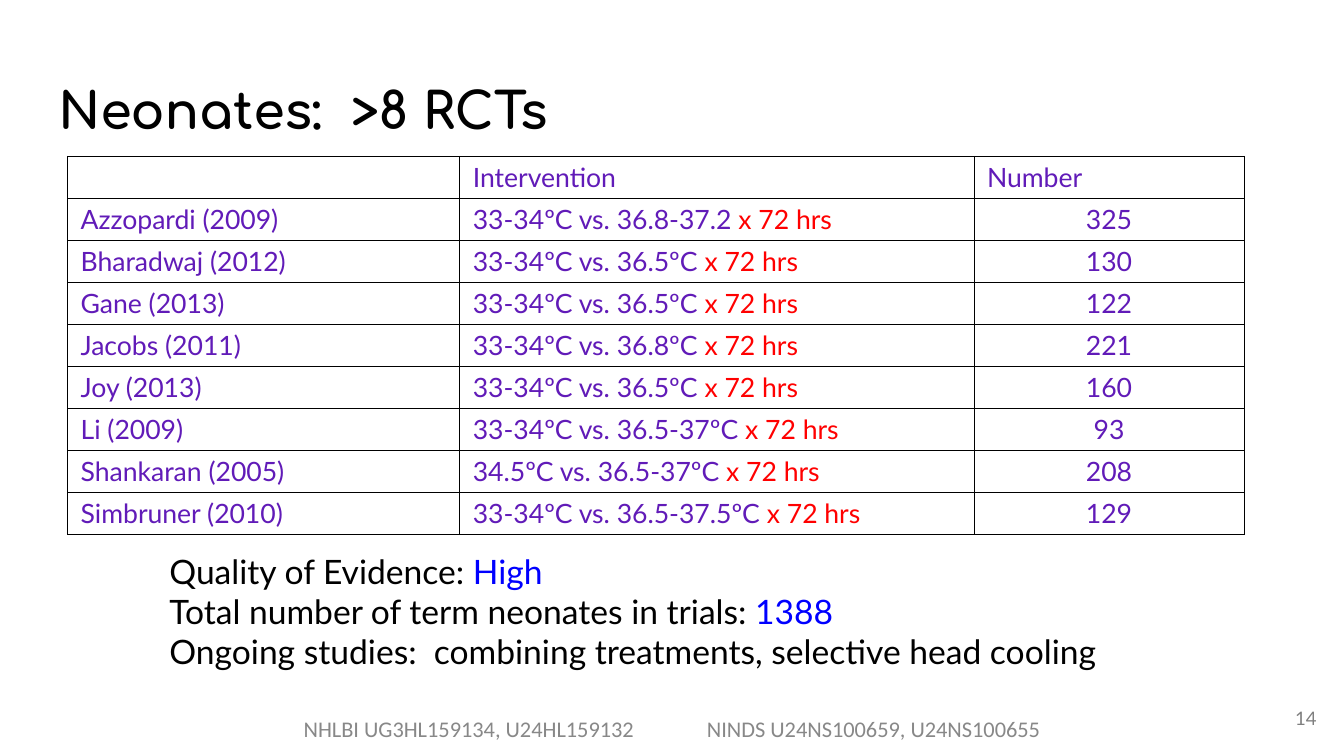
from lxml.etree import SubElement
from pptx import Presentation
from pptx.dml.color import RGBColor
from pptx.enum.text import MSO_ANCHOR, PP_ALIGN
from pptx.oxml.ns import qn
from pptx.util import Pt

PX = 9144
COLORS = {"black": "000000", "purple": "611BB8", "red": "FF0000",
          "blue": "0000FF", "footer": "888888", "number": "7F7F7F"}
COLUMNS = [389, 510, 268]
ROW_HEIGHT = 41
DURATION = "x 72 hrs"
TRIALS = [
    ("Azzopardi (2009)", "33-34ºC vs. 36.8-37.2 ", 325),
    ("Bharadwaj (2012)", "33-34ºC vs. 36.5ºC ", 130),
    ("Gane (2013)", "33-34ºC vs. 36.5ºC ", 122),
    ("Jacobs (2011)", "33-34ºC vs. 36.8ºC ", 221),
    ("Joy (2013)", "33-34ºC vs. 36.5ºC ", 160),
    ("Li (2009)", "33-34ºC vs. 36.5-37ºC ", 93),
    ("Shankaran (2005)", "34.5ºC vs. 36.5-37ºC ", 208),
    ("Simbruner (2010)", "33-34ºC vs. 36.5-37.5ºC ", 129),
]
SUMMARY = [
    [("Quality of Evidence: ", "black"), ("High", "blue")],
    [("Total number of term neonates in trials: ", "black"), ("1388", "blue")],
    [("Ongoing studies:  combining treatments, selective head cooling", "black")],
]


def px(n):
    """Turn px into EMU."""
    return round(n * PX)


def write_runs(p, runs, size, font, bold=False, align=PP_ALIGN.LEFT):
    """Fill a paragraph with (text, colour) runs."""
    p.alignment = align
    for text, color in runs:
        r = p.add_run()
        r.text = text
        r.font.size, r.font.name, r.font.bold = Pt(size), font, bold
        r.font.color.rgb = RGBColor.from_string(COLORS[color])


def add_text(slide, box, lines, size, font, inset=13, anchor=MSO_ANCHOR.TOP, **style):
    """Add a wrapped text box with one paragraph per line."""
    tf = slide.shapes.add_textbox(*map(px, box)).text_frame
    tf.word_wrap = True
    tf.vertical_anchor = anchor
    tf.margin_left = tf.margin_right = px(13)
    tf.margin_top = tf.margin_bottom = px(inset)
    for i, runs in enumerate(lines):
        p = tf.add_paragraph() if i else tf.paragraphs[0]
        write_runs(p, runs, size, font, **style)
    return tf


def add_footer(slide, box):
    """Add the grant numbers, parted by a tab."""
    tf = add_text(slide, box,
                  [[("NHLBI UG3HL159134, U24HL159132\tNINDS U24NS100659, U24NS100655", "footer")]],
                  16, "Calibri", anchor=MSO_ANCHOR.MIDDLE, align=PP_ALIGN.CENTER)
    tabs = SubElement(tf.paragraphs[0]._p.get_or_add_pPr(), qn("a:tabLst"))
    SubElement(tabs, qn("a:tab"), pos=str(px(400)), algn="l")


def style_cell(cell):
    """Clear the fill, set the margins and draw thin black borders."""
    cell.margin_left = cell.margin_right = px(13)
    cell.margin_top = cell.margin_bottom = px(5)
    tcPr = cell._tc.get_or_add_tcPr()
    for side in ("a:lnL", "a:lnR", "a:lnT", "a:lnB"):
        ln = SubElement(tcPr, qn(side), w=str(Pt(0.75)))
        fill = SubElement(ln, qn("a:solidFill"))
        SubElement(fill, qn("a:srgbClr"), val=COLORS["black"])
    cell.fill.background()


def add_trials(slide, left, top):
    """Add the table of trials."""
    rows = [[[], [("Intervention", "purple")], [("Number", "purple")]]]
    rows += [[[(study, "purple")], [(temps, "purple"), (DURATION, "red")],
              [(str(number), "purple")]] for study, temps, number in TRIALS]
    box = (left, top, sum(COLUMNS), ROW_HEIGHT * len(rows))
    table = slide.shapes.add_table(len(rows), len(COLUMNS), *map(px, box)).table
    table.first_row = table.horz_banding = False
    for column, width in zip(table.columns, COLUMNS):
        column.width = px(width)
    for i, row in enumerate(rows):
        for j, runs in enumerate(row):
            cell = table.cell(i, j)
            style_cell(cell)
            align = PP_ALIGN.CENTER if i and j == 2 else PP_ALIGN.LEFT
            write_runs(cell.text_frame.paragraphs[0], runs, 19, "Lato", align=align)


def build_slide(prs):
    """Build the slide of neonatal trials."""
    slide = prs.slides.add_slide(prs.slide_layouts[6])
    add_footer(slide, (264, 696, 805, 54))
    add_trials(slide, 67, 155)
    add_text(slide, (155, 539, 954, 101), SUMMARY, 24, "Lato", inset=7)
    add_text(slide, (45, 65, 1242, 91), [[("Neonates:  >8 RCTs", "black")]],
             36, "Comfortaa", bold=True)
    add_text(slide, (1239, 684, 80, 57), [[("14", "number")]], 13.3, "Lato",
             anchor=MSO_ANCHOR.MIDDLE, align=PP_ALIGN.RIGHT)


def main():
    """Make the presentation and save it."""
    prs = Presentation()
    prs.slide_width, prs.slide_height = px(1333), px(750)
    build_slide(prs)
    prs.save("out.pptx")


if __name__ == "__main__":
    main()
